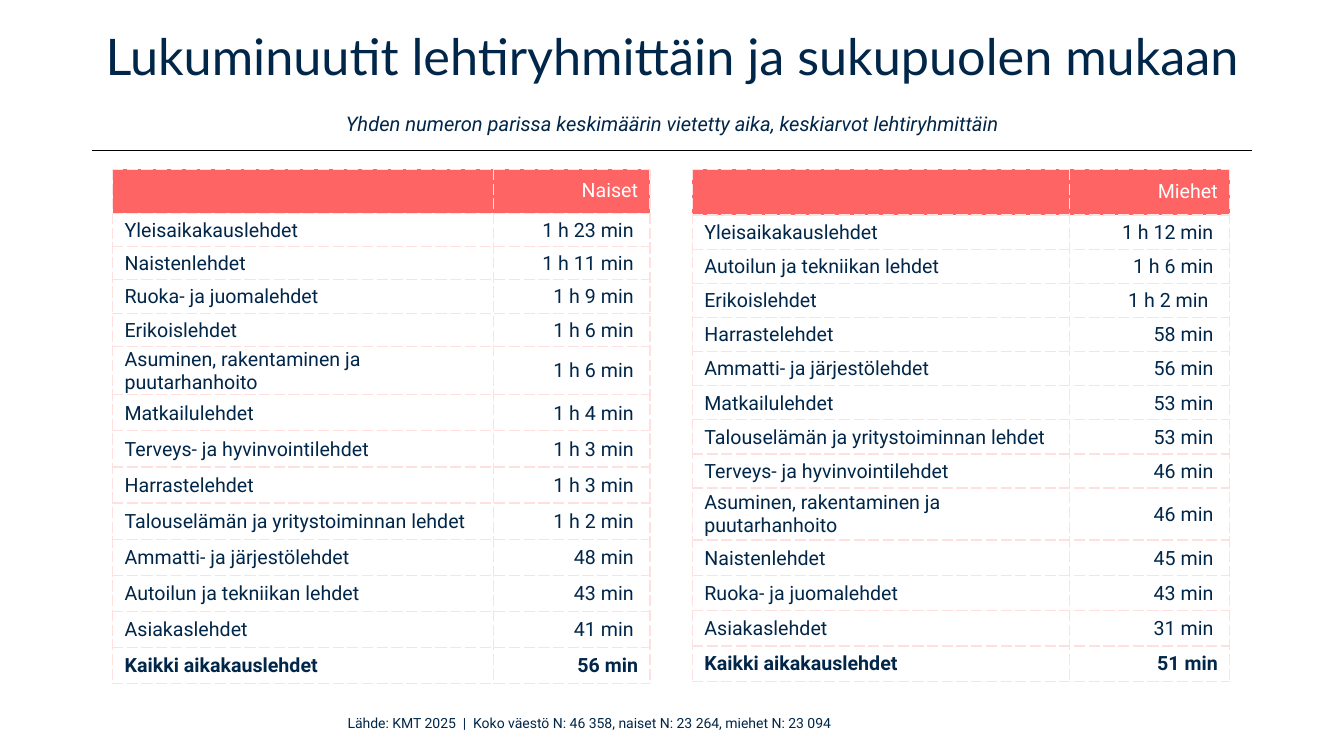
from dataclasses import dataclass

from lxml import etree
from pptx import Presentation
from pptx.dml.color import RGBColor
from pptx.enum import shapes, text
from pptx.oxml import ns
from pptx.util import Cm, Pt

NAVY = RGBColor(0x00, 0x26, 0x49)
BLACK = RGBColor(0x00, 0x00, 0x00)
WHITE = RGBColor(0xFF, 0xFF, 0xFF)
CORAL = RGBColor(0xFF, 0x64, 0x64)
PINK = RGBColor(0xFF, 0xE0, 0xE0)

LEFT, RIGHT = text.PP_ALIGN.LEFT, text.PP_ALIGN.RIGHT


@dataclass
class Group:
    """Reading times of one gender; lengths in centimetres."""
    name: str
    left: float
    cols: list[float]
    heights: list[float]
    times: list[tuple[str, str]]


WOMEN = Group("Naiset", 2.84, [9.6, 3.94], [1.1] + [0.84] * 5 + [0.91] * 8, [
    ("Yleisaikakauslehdet", "1 h 23 min"),
    ("Naistenlehdet", "1 h 11 min"),
    ("Ruoka- ja juomalehdet", "1 h 9 min"),
    ("Erikoislehdet", "1 h 6 min"),
    ("Asuminen, rakentaminen ja puutarhanhoito", "1 h 6 min"),
    ("Matkailulehdet", "1 h 4 min"),
    ("Terveys- ja hyvinvointilehdet", "1 h 3 min"),
    ("Harrastelehdet", "1 h 3 min"),
    ("Talouselämän ja yritystoiminnan lehdet", "1 h 2 min"),
    ("Ammatti- ja järjestölehdet", "48 min"),
    ("Autoilun ja tekniikan lehdet", "43 min"),
    ("Asiakaslehdet", "41 min"),
    ("Kaikki aikakauslehdet", "56 min"),
])
MEN = Group("Miehet", 17.45, [9.5, 4.04],
            [1.15] + [0.86] * 8 + [1.31] + [0.89] * 4, [
    ("Yleisaikakauslehdet", "1 h 12 min"),
    ("Autoilun ja tekniikan lehdet", "1 h 6 min"),
    ("Erikoislehdet", "1 h 2 min "),
    ("Harrastelehdet", "58 min"),
    ("Ammatti- ja järjestölehdet", "56 min"),
    ("Matkailulehdet", "53 min"),
    ("Talouselämän ja yritystoiminnan lehdet", "53 min"),
    ("Terveys- ja hyvinvointilehdet", "46 min"),
    ("Asuminen, rakentaminen ja puutarhanhoito", "46 min"),
    ("Naistenlehdet", "45 min"),
    ("Ruoka- ja juomalehdet", "43 min"),
    ("Asiakaslehdet", "31 min"),
    ("Kaikki aikakauslehdet", "51 min"),
])


def style(font, name: str, size: float, color: RGBColor = NAVY) -> None:
    font.name, font.size = name, Pt(size)
    font.color.rgb = color


def add_box(slide, left: float, top: float, width: float, height: float):
    """Add a wrapping text box without insets and return its text frame."""
    frame = slide.shapes.add_textbox(
        Cm(left), Cm(top), Cm(width), Cm(height)).text_frame
    frame.word_wrap = True
    frame.margin_left = frame.margin_right = 0
    frame.margin_top = frame.margin_bottom = 0
    frame.vertical_anchor = text.MSO_ANCHOR.MIDDLE
    frame.paragraphs[0].alignment = text.PP_ALIGN.CENTER
    return frame


def add_title(slide) -> None:
    par = add_box(slide, 2.34, 0.81, 29.21, 2.72).paragraphs[0]
    par.line_spacing = Pt(35)
    head = par.add_run()
    head.text = "Lukuminuutit lehtiryhmittäin ja sukupuolen mukaan"
    style(head.font, "Lato", 36)
    par.add_line_break()
    sub = par.add_run()
    sub.text = ("Yhden numeron parissa keskimäärin vietetty aika, "
                "keskiarvot lehtiryhmittäin")
    style(sub.font, "Roboto", 14.4)
    sub.font.italic = True


def add_rule(slide) -> None:
    rule = slide.shapes.add_connector(
        shapes.MSO_CONNECTOR.STRAIGHT, Cm(2.32), Cm(3.8), Cm(31.55), Cm(3.8))
    rule.line.color.rgb = BLACK
    rule.line.width = Pt(1)
    etree.SubElement(rule._element.spPr, ns.qn("a:effectLst"))


def add_source(slide) -> None:
    par = add_box(slide, 6.38, 17.88, 16.94, 0.69).paragraphs[0]
    par.text = ("Lähde: KMT 2025  |  Koko väestö N: 46 358, "
                "naiset N: 23 264, miehet N: 23 094")
    style(par.font, "Roboto", 10)


def set_edges(cell) -> None:
    """Give the cell dashed pink borders on all four sides."""
    props = cell._tc.get_or_add_tcPr()
    for spot, side in enumerate(("lnL", "lnR", "lnT", "lnB")):
        edge = etree.Element(ns.qn(f"a:{side}"), w=str(Pt(1)))
        fill = etree.SubElement(edge, ns.qn("a:solidFill"))
        etree.SubElement(fill, ns.qn("a:srgbClr"), val=str(PINK))
        etree.SubElement(edge, ns.qn("a:prstDash"), val="sysDash")
        props.insert(spot, edge)


def fill_cell(cell, words: str, col: int, head: bool, total: bool) -> None:
    cell.vertical_anchor = text.MSO_ANCHOR.MIDDLE
    wide = 0.3 if head or total else 0.41
    cell.margin_left = Cm(0.03 if col else 0.3)
    cell.margin_right = Cm(wide if col else 0.03)
    cell.margin_top = Cm(0.13 if head else 0.03)
    cell.margin_bottom = Cm(0.13 if head else 0)
    if head:
        cell.fill.solid()
        cell.fill.fore_color.rgb = CORAL
    else:
        cell.fill.background()
    set_edges(cell)
    par = cell.text_frame.paragraphs[0]
    par.text = words
    par.alignment = RIGHT if col else LEFT
    style(par.font, "Roboto", 14, WHITE if head else NAVY)
    par.font.bold = total


def add_group(slide, group: Group) -> None:
    rows = [("", group.name)] + group.times
    table = slide.shapes.add_table(
        len(rows), 2, Cm(group.left), Cm(4.27),
        Cm(sum(group.cols)), Cm(sum(group.heights))).table
    table.first_row = table.horz_banding = False
    for col, width in enumerate(group.cols):
        table.columns[col].width = Cm(width)
    for row, (pair, height) in enumerate(zip(rows, group.heights)):
        table.rows[row].height = Cm(height)
        for col, words in enumerate(pair):
            fill_cell(table.cell(row, col), words, col,
                      row == 0, row == len(rows) - 1)


def main() -> None:
    deck = Presentation()
    deck.slide_width, deck.slide_height = Cm(33.87), Cm(19.05)
    slide = deck.slides.add_slide(deck.slide_layouts[6])
    add_rule(slide)
    add_source(slide)
    add_title(slide)
    for group in (WOMEN, MEN):
        add_group(slide, group)
    deck.save("out.pptx")


if __name__ == "__main__":
    main()
